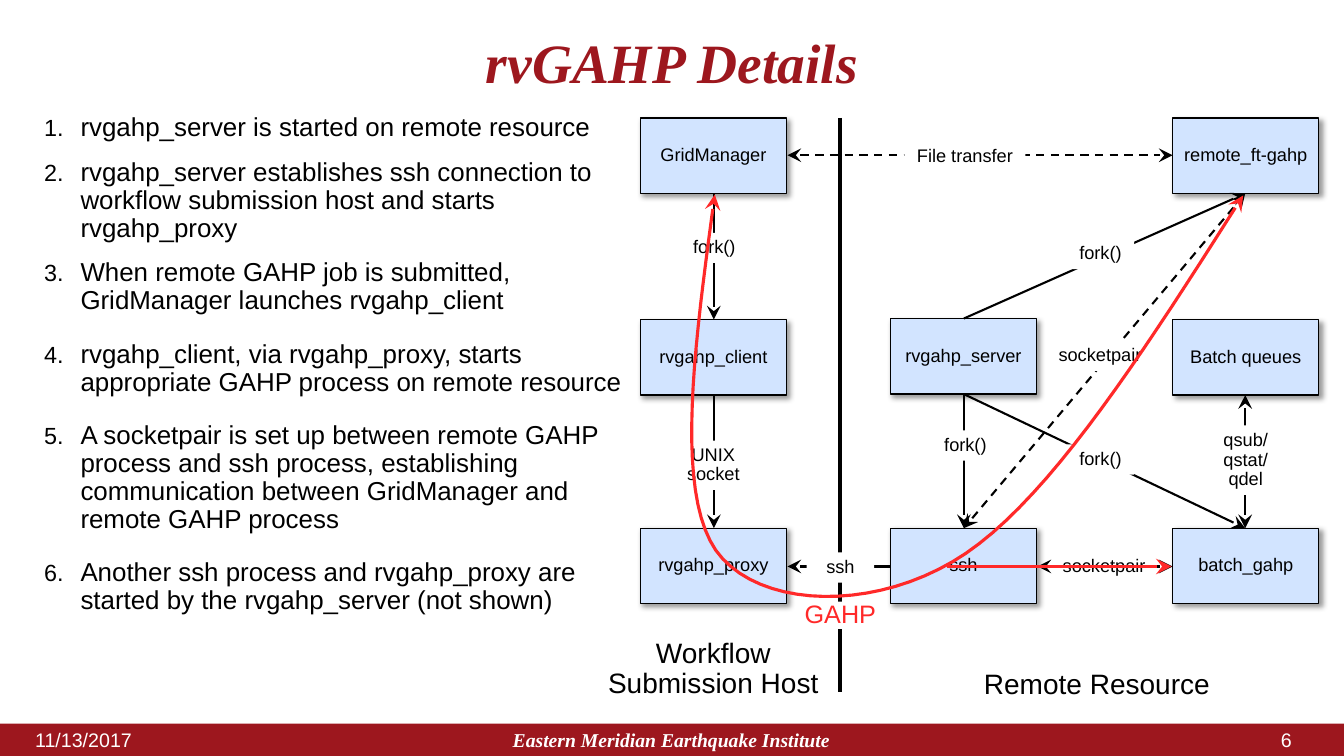
"""Builds the rvGAHP details slide: numbered steps beside a process diagram."""
from lxml import etree
from pptx import Presentation
from pptx.dml.color import RGBColor
from pptx.enum import dml, shapes, text
from pptx.oxml import ns
from pptx.util import Inches, Pt

BLACK, WHITE, RED, MAROON, BLUE = "000000", "FFFFFF", "FF2929", "9D171E", "D2E4FF"
CENTER, LEFT, RIGHT = text.PP_ALIGN.CENTER, text.PP_ALIGN.LEFT, text.PP_ALIGN.RIGHT
MIDDLE, TOP = text.MSO_ANCHOR.MIDDLE, text.MSO_ANCHOR.TOP
NODE_WIDTH, NODE_HEIGHT = 1.45, 0.75

STEPS = [
    ("rvgahp_server is started on remote resource", 12),
    ("rvgahp_server establishes ssh connection to workflow submission host "
     "and starts rvgahp_proxy", 12),
    ("When remote GAHP job is submitted, GridManager launches rvgahp_client", 12),
    ("rvgahp_client, via rvgahp_proxy, starts appropriate GAHP process "
     "on remote resource", 18),
    ("A socketpair is set up between remote GAHP process and ssh process, "
     "establishing communication between GridManager and remote GAHP process", 18),
    ("Another ssh process and rvgahp_proxy are started by the rvgahp_server "
     "(not shown)", 18),
]
NODES = [
    ("rvgahp_server", 8.83, 3.16), ("ssh", 8.83, 5.24),
    ("rvgahp_proxy", 6.35, 5.24), ("rvgahp_client", 6.35, 3.17),
    ("GridManager", 6.35, 1.17), ("remote_ft-gahp", 11.63, 1.17),
    ("Batch queues", 11.63, 3.17), ("batch_gahp", 11.63, 5.24),
]
ARROWS = [
    ((9.56, 3.91), (9.56, 5.24), False, False),
    ((9.56, 3.91), (12.35, 5.24), False, False),
    ((7.81, 1.54), (11.63, 1.54), True, True),
    ((12.35, 5.24), (12.35, 3.92), True, False),
    ((8.83, 5.62), (7.81, 5.62), False, False),
    ((7.08, 3.92), (7.08, 5.24), False, False),
    ((7.08, 1.92), (7.08, 3.17), False, False),
    ((9.56, 3.16), (12.35, 1.92), False, False),
    ((10.29, 5.62), (11.63, 5.62), True, True),
]
LABELS = [
    ("fork()", 9.24, 4.27, 0.67, 0.3), ("fork()", 6.75, 2.31, 0.67, 0.3),
    ("qsub/qstat/qdel", 12.02, 4.22, 0.67, 0.69),
    ("File transfer", 8.97, 1.4, 1.2, 0.3),
    ("fork()", 10.58, 4.41, 0.67, 0.3), ("ssh", 8, 5.48, 0.67, 0.3),
    ("fork()", 10.58, 2.37, 0.67, 0.3),
]
GAHP_CURVES = [
    ((7.09, 1.93), (6.89, 3.4), (6.69, 4.86), (7.1, 5.46)),
    ((7.1, 5.46), (7.52, 6.05), (8.71, 6.08), (9.58, 5.49)),
    ((9.58, 5.49), (10.45, 4.9), (11.39, 3.42), (12.33, 1.94)),
]


def color(value):
    """Return the colour for a hex string."""
    return RGBColor.from_string(value)


def element(parent, tag, **attributes):
    """Append a drawing element to a parent."""
    return etree.SubElement(parent, ns.qn(tag), attributes)


def style_paragraph(para, size, ink=BLACK, align=CENTER, font="Arial", spacing=0.9, bold=False):
    """Set the look of a whole paragraph."""
    para.alignment, para.line_spacing = align, spacing
    para.font.size, para.font.name = Pt(size), font
    para.font.color.rgb = color(ink)
    para.font.bold = para.font.italic = bold


def write(box, words, size, anchor=MIDDLE, inset=0.1, **style):
    """Put one styled paragraph into a shape."""
    frame = box.text_frame
    frame.word_wrap, frame.vertical_anchor = True, anchor
    frame.margin_left = frame.margin_right = Inches(inset)
    frame.text = words
    style_paragraph(frame.paragraphs[0], size, **style)


def add_text(page, words, place, size, **style):
    """Add a text box at left, top, width, height."""
    box = page.shapes.add_textbox(*map(Inches, place))
    write(box, words, size, **style)


def add_panel(page, place, fill):
    """Add a plain filled rectangle."""
    box = page.shapes.add_shape(shapes.MSO_SHAPE.RECTANGLE, *map(Inches, place))
    box.shadow.inherit = False
    box.fill.solid()
    box.fill.fore_color.rgb = color(fill)
    box.line.fill.background()
    return box


def add_label(page, words, *place, size=13, **style):
    """Add a white label that interrupts the line behind it."""
    write(add_panel(page, place, WHITE), words, size, **style)


def add_node(page, words, left, top):
    """Add a process box with a soft shadow."""
    box = add_panel(page, (left, top, NODE_WIDTH, NODE_HEIGHT), BLUE)
    box.line.color.rgb, box.line.width = color(BLACK), Pt(1)
    write(box, words, 13, inset=0)
    effects = box._element.spPr.find(ns.qn("a:effectLst"))
    shadow = element(effects, "a:outerShdw", blurRad=str(Pt(4)), dist=str(Pt(3)),
                     dir="2700000", algn="tl", rotWithShape="0")
    element(element(shadow, "a:srgbClr", val=BLACK), "a:alpha", val="40000")


def style_line(line, ink, width, both=False, dashed=False, arrow=True):
    """Set colour, width, dash and arrowheads of a line."""
    line.color.rgb, line.width = color(ink), Pt(width)
    if dashed:
        line.dash_style = dml.MSO_LINE.DASH
    outline = line._get_or_add_ln()
    for tag, wanted in (("a:headEnd", both), ("a:tailEnd", arrow)):
        if wanted:
            element(outline, tag, type="stealth", w="lg", len="lg")


def add_line(page, start, end, both=False, dashed=False, ink=BLACK, width=1.5, arrow=True):
    """Add a straight line between two points."""
    link = page.shapes.add_connector(shapes.MSO_CONNECTOR.STRAIGHT, *map(Inches, start + end))
    style_line(link.line, ink, width, both, dashed, arrow)
    element(link._element.spPr, "a:effectLst")


def curve_point(curve, t):
    """Return the point of a cubic curve at t."""
    weights = ((1 - t) ** 3, 3 * t * (1 - t) ** 2, 3 * t * t * (1 - t), t ** 3)
    return tuple(Inches(sum(w * p[axis] for w, p in zip(weights, curve))) for axis in (0, 1))


def add_gahp_route(page, steps=20):
    """Add the curved red route of the GAHP connection."""
    points = [curve_point(curve, step / steps)
              for curve in GAHP_CURVES for step in range(1, steps + 1)]
    builder = page.shapes.build_freeform(*curve_point(GAHP_CURVES[0], 0))
    builder.add_line_segments(points, close=False)
    route = builder.convert_to_shape()
    route.shadow.inherit = False
    route.fill.background()
    style_line(route.line, RED, 2.25, both=True)


def add_steps(page):
    """Add the numbered list of steps."""
    box = page.shapes.add_textbox(*map(Inches, (0.33, 1.08, 6.08, 5.92)))
    frame = box.text_frame
    frame.word_wrap = True
    for index, (words, gap) in enumerate(STEPS):
        para = frame.add_paragraph() if index else frame.paragraphs[0]
        para.text = words
        style_paragraph(para, 18.5, align=LEFT)
        para.space_before = Pt(gap)
        settings = para._p.get_or_add_pPr()
        settings.set("marL", str(Inches(0.37)))
        settings.set("indent", str(Inches(-0.36)))
        bullet_size = etree.Element(ns.qn("a:buSzPct"), val="90000")
        numbering = etree.Element(ns.qn("a:buAutoNum"), type="arabicPeriod")
        for item in (bullet_size, numbering):
            settings.find(ns.qn("a:defRPr")).addprevious(item)


def add_footer(page):
    """Add the date, centre name and page number."""
    footer = {"ink": WHITE, "spacing": 1}
    add_text(page, "11/13/2017", (0.25, 7.24, 1.53, 0.2), 14, align=LEFT, **footer)
    add_text(page, "Eastern Meridian Earthquake Institute", (4.41, 7.14, 4.5, 0.4), 14,
             font="Times New Roman", bold=True, **footer)
    add_text(page, "6", (11.66, 7.24, 1.25, 0.2), 14, align=RIGHT, **footer)


def main():
    """Build and save the slide."""
    deck = Presentation()
    deck.slide_width, deck.slide_height = Inches(13.33), Inches(7.5)
    page = deck.slides.add_slide(deck.slide_layouts[6])
    add_panel(page, (0, 7.18, 13.33, 0.32), MAROON)
    add_line(page, (9.56, 5.24), (12.35, 1.92), both=True, dashed=True)
    add_label(page, "socketpair", 10.31, 3.38, 1.2, 0.3)
    add_text(page, "rvGAHP Details", (0.33, 0.3, 12.67, 0.7), 39.6, ink=MAROON,
             font="Times New Roman", bold=True)
    add_steps(page)
    add_footer(page)
    add_line(page, (8.33, 1.17), (8.33, 6.87), width=3, arrow=False)
    add_text(page, "Workflow Submission Host", (5.91, 6.29, 2.33, 0.71), 20, anchor=TOP)
    add_text(page, "Remote Resource", (9.66, 6.6, 2.67, 0.4), 20, anchor=TOP, align=LEFT)
    for node in NODES:
        add_node(page, *node)
    for arrow in ARROWS:
        add_line(page, *arrow)
    for label in LABELS:
        add_label(page, *label)
    add_label(page, "socketpair", 10.49, 5.47, 0.92, 0.3, inset=0)
    add_line(page, (9.39, 5.62), (11.62, 5.62), ink=RED, width=2.25)
    add_label(page, "GAHP", 7.96, 5.97, 0.75, 0.27, size=18, ink=RED, inset=0)
    add_label(page, "UNIX socket", 6.66, 4.37, 0.83, 0.49)
    add_gahp_route(page)
    deck.save("out.pptx")


if __name__ == "__main__":
    main()
